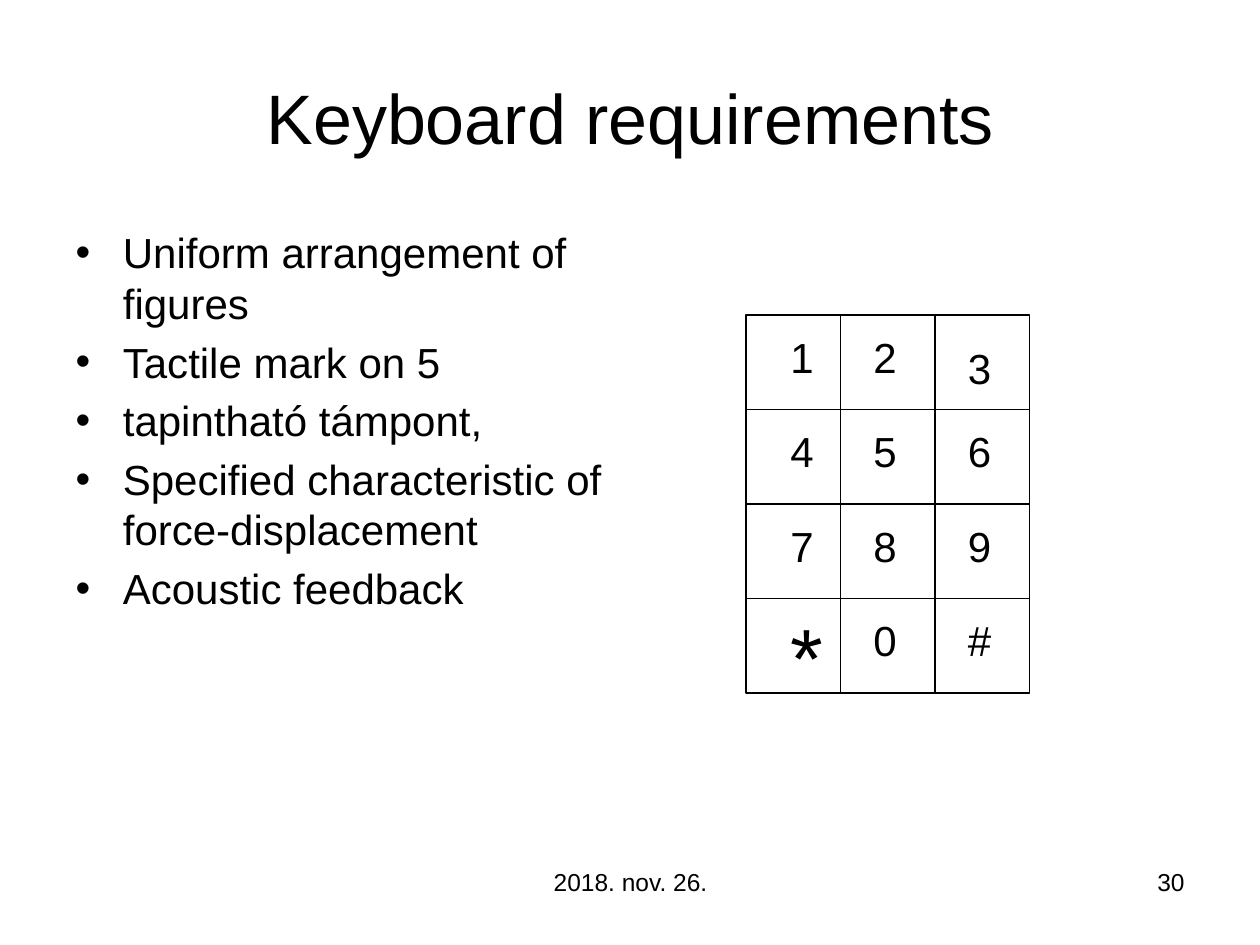
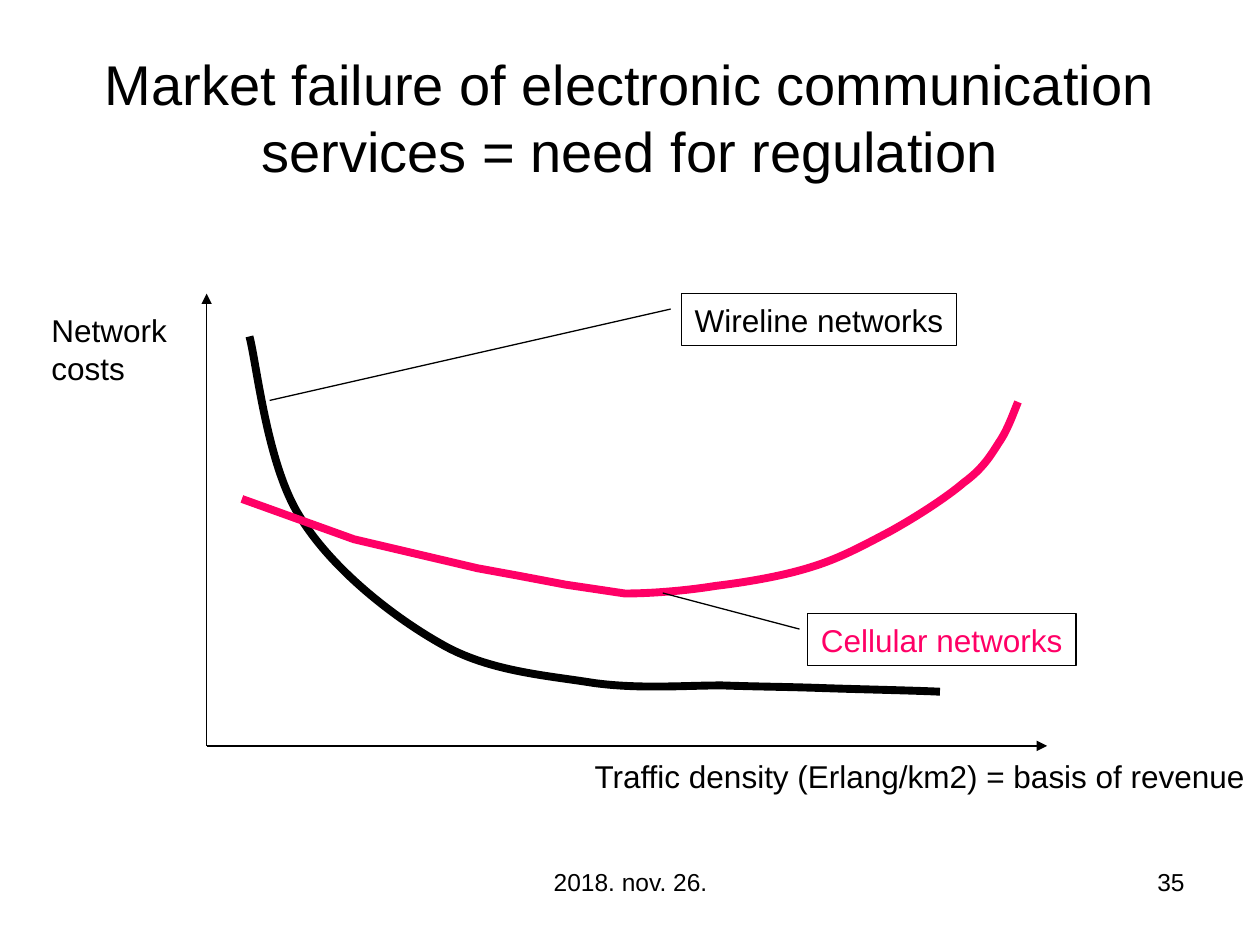
from pptx import Presentation
from pptx.util import Inches, Pt
from pptx.dml.color import RGBColor
from pptx.enum.shapes import MSO_SHAPE as Shape, MSO_CONNECTOR as Conn
from pptx.enum.text import PP_ALIGN as Align, MSO_ANCHOR as Anchor, MSO_AUTO_SIZE as Fit
from pptx.oxml.ns import qn
from lxml.etree import SubElement

# Shared style
WIDE, HIGH = 10, 7.5
BLACK = RGBColor(0x00, 0x00, 0x00)
PINK = RGBColor(0xFF, 0x00, 0x66)
FONT = "Arial"
THIN, THICK = 0.75, 4.5
TITLE = (0.5, 0.3, WIDE - 1, 1.25)
DATE = "2018. nov. 26."
DATE_BOX = (3.42, 6.83, 3.17, 0.52)
PAGE_BOX = (7.17, 6.83, 2.33, 0.52)

# Keyboard slide
NEEDS = [
    "Uniform arrangement of figures",
    "Tactile mark on 5",
    "tapintható támpont,",
    "Specified characteristic of force-displacement",
    "Acoustic feedback",
]
NEEDS_BOX = (0.5, 1.75, 4.81, 4.95)
KEYS = ["123", "456", "789", "*0#"]
PAD_LEFT, PAD_TOP, KEY = 5.92, 2.5, 0.75
INSETS = (0.25, 0.16, 0.16)   # label offset in each key column
DROP = 0.08                   # label offset from the key's top
ODD = {                       # labels that differ: drop, width, height, size
    "3": (0.17, 0.39, 0.5, 24),
    "*": (0, 0.46, 0.9, 48),
}

# Market slide
ORIGIN = (1.64, 5.92)
AXIS_ENDS = [(8.31, 5.92), (1.64, 2.33)]
AXIS_TEXT = [
    ("Traffic density (Erlang/km2) = basis of revenue", (4.62, 5.96, 5.38, 0.4), False),
    ("Network costs", (0.31, 2.42, 1.25, 0.7), True),
]
# Each curve: colour, start, then lines (one point) or Bézier arcs (three points)
CURVES = [
    (BLACK, (1.98, 2.67), [
        [(2.04, 2.9), (2.12, 3.69), (2.38, 4.1)],
        [(2.63, 4.51), (3.11, 4.89), (3.5, 5.11)],
        [(3.88, 5.33), (4.34, 5.36), (4.71, 5.42)],
        [(5.08, 5.47), (5.43, 5.44), (5.73, 5.44)],
        [(6.02, 5.45), (6.21, 5.45), (6.5, 5.46)],
        [(6.79, 5.47), (7.26, 5.48), (7.46, 5.49)],
    ]),
    (PINK, (1.92, 3.96), [
        [(2.81, 4.28)], [(3.79, 4.51)], [(4.12, 4.57)], [(4.49, 4.64)], [(4.96, 4.71)],
        [(5.16, 4.71), (5.43, 4.69), (5.68, 4.65)],
        [(5.93, 4.62), (6.22, 4.57), (6.44, 4.5)],
        [(6.67, 4.43), (6.85, 4.33), (7.06, 4.22)],
        [(7.26, 4.11), (7.51, 3.95), (7.65, 3.83)],
        [(7.8, 3.72), (7.86, 3.62), (7.93, 3.51)],
        [(8, 3.41), (8.05, 3.26), (8.08, 3.19)],
    ]),
]
# Each callout: text, colour, box, pointer as shares of the box (y, x, y, x)
CALLS = [
    ("Wireline networks", BLACK, (5.41, 2.33, 2.18, 0.41), (0.3, -0.04, 2.07, -1.5)),
    ("Cellular networks", PINK, (6.41, 4.87, 2.13, 0.41), (0.3, -0.03, -0.4, -0.54)),
]


def inches(box):
    return [Inches(v) for v in box]


def write(shape, lines, size, align=Align.LEFT, color=BLACK, **frame):
    """Fill a shape's text frame; extra values are set on the frame."""
    text = shape.text_frame
    text.text = "\n".join(lines)
    for name, value in frame.items():
        setattr(text, name, value)
    style = {"name": FONT, "size": Pt(size)}
    for para in text.paragraphs:
        para.alignment = align
        for name, value in style.items():
            setattr(para.font, name, value)
        para.font.color.rgb = color


def label(board, line, box, size, align=Align.LEFT, **frame):
    shape = board.shapes.add_textbox(*inches(box))
    write(shape, [line], size, align, **{"word_wrap": True, **frame})


def ink(shape, color, width):
    shape.shadow.inherit = False
    shape.fill.background()
    shape.line.color.rgb = color
    shape.line.width = Pt(width)


def place(shape, box):
    shape.left, shape.top, shape.width, shape.height = inches(box)


def start(deck, layout, title, size, page):
    """Add a slide with its title, date and page number."""
    slide = deck.slides.add_slide(deck.slide_layouts[layout])
    head = slide.shapes.title
    place(head, TITLE)
    write(head, [title], size, Align.CENTER,
          vertical_anchor=Anchor.MIDDLE, auto_size=Fit.NONE)
    label(slide, DATE, DATE_BOX, 14, Align.CENTER)
    label(slide, page, PAGE_BOX, 14, Align.RIGHT)
    return slide


def arrow(board, tip):
    line = board.shapes.add_connector(Conn.STRAIGHT, *inches(ORIGIN + tip))
    line.line.color.rgb = BLACK
    line.line.width = Pt(THIN)
    props = line._element.spPr
    SubElement(props.find(qn("a:ln")), qn("a:tailEnd"), type="triangle")
    SubElement(props, qn("a:effectLst"))


def curve(board, color, first, parts):
    """Draw the end points as a line, then bend the parts that are arcs."""
    build = board.shapes.build_freeform(*inches(first))
    build.add_line_segments([inches(part[-1]) for part in parts], close=False)
    shape = build.convert_to_shape()
    ink(shape, color, THICK)
    steps = list(shape._element.iter(qn("a:lnTo")))
    for step, part in zip(steps, parts):
        if len(part) == 1:
            continue
        step.tag = qn("a:cubicBezTo")
        for spot, (x, y) in enumerate(part[:-1]):
            point = SubElement(step, qn("a:pt"), x=str(Inches(x) - shape.left),
                               y=str(Inches(y) - shape.top))
            step.insert(spot, point)


def callout(board, name, color, box, pointer):
    call = board.shapes.add_shape(Shape.LINE_CALLOUT_1, *inches(box))
    for spot, share in enumerate(pointer):
        call.adjustments[spot] = share
    ink(call, BLACK, THIN)
    write(call, [name], 18, Align.CENTER, color, word_wrap=False,
          vertical_anchor=Anchor.MIDDLE, auto_size=Fit.SHAPE_TO_FIT_TEXT)


def keyboard(deck):
    slide = start(deck, 1, "Keyboard requirements", 40, "30")
    body = slide.placeholders[1]
    place(body, NEEDS_BOX)
    write(body, NEEDS, 24, auto_size=Fit.NONE)

    # Keys first, then their labels
    spots = [(sign, col, PAD_LEFT + col * KEY, PAD_TOP + row * KEY)
             for row, signs in enumerate(KEYS) for col, sign in enumerate(signs)]
    for _, _, x, y in spots:
        ink(slide.shapes.add_shape(Shape.RECTANGLE, *inches((x, y, KEY, KEY))), BLACK, THIN)
    for sign, col, x, y in spots:
        drop, wide, high, size = ODD.get(sign, (DROP, 0.39, 0.5, 24))
        label(slide, sign, (x + INSETS[col], y + drop, wide, high), size, Align.CENTER,
              word_wrap=False, vertical_anchor=Anchor.MIDDLE, auto_size=Fit.SHAPE_TO_FIT_TEXT)


def market(deck):
    title = "Market failure of electronic communication services = need for regulation"
    slide = start(deck, 5, title, 32, "35")
    graph = slide.shapes.add_group_shape()

    # Axes
    for tip in AXIS_ENDS:
        arrow(graph, tip)
    for line, box, wrap in AXIS_TEXT:
        label(graph, line, box, 18, word_wrap=wrap, auto_size=Fit.SHAPE_TO_FIT_TEXT)

    # Each curve with its callout; the second pair lies over the graph
    for board, path, call in zip((graph, slide), CURVES, CALLS):
        curve(board, *path)
        callout(board, *call)


def main():
    deck = Presentation()
    deck.slide_width, deck.slide_height = inches((WIDE, HIGH))
    keyboard(deck)
    market(deck)
    deck.save("out.pptx")


if __name__ == "__main__":
    main()
